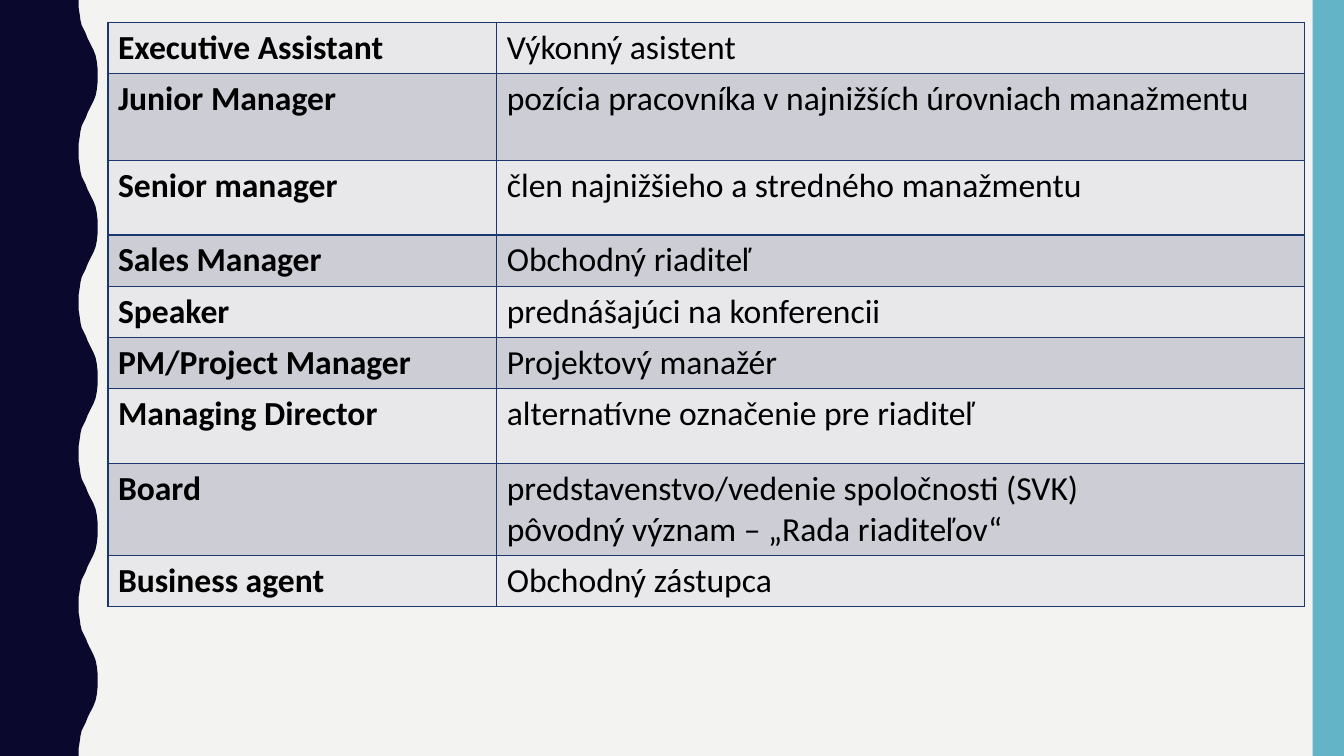
from dataclasses import dataclass

from lxml.etree import SubElement
from pptx import Presentation
from pptx.dml.color import RGBColor
from pptx.enum.shapes import MSO_SHAPE
from pptx.oxml.ns import qn
from pptx.util import Cm, Pt


@dataclass(frozen=True)
class Theme:
    background: str = "F3F3F2"
    wave: str = "0B082E"
    stripe: str = "62B4C6"
    bands: tuple = ("E8E8EB", "CDCED5")
    border: str = "1B376E"
    text: str = "000000"
    font: str = "Calibri"
    size: int = 24


theme = Theme()


def paint(shape, color):
    """Flat fill without outline or shadow."""
    shape.fill.solid()
    shape.fill.fore_color.rgb = RGBColor.from_string(color)
    shape.line.fill.background()
    shape.shadow.inherit = False


def add_borders(cell, color, width):
    """Draw all four sides; borders must precede the fill in the XML."""
    properties = cell._tc.get_or_add_tcPr()
    for position, side in enumerate(("lnL", "lnR", "lnT", "lnB")):
        line = SubElement(properties, qn(f"a:{side}"), w=str(width))
        fill = SubElement(line, qn("a:solidFill"))
        SubElement(fill, qn("a:srgbClr"), val=color)
        properties.insert(position, line)


# Slide and background
presentation = Presentation()
presentation.slide_width = Cm(33.87)
presentation.slide_height = Cm(19.05)
slide = presentation.slides.add_slide(presentation.slide_layouts[6])
slide.background.fill.solid()
slide.background.fill.fore_color.rgb = RGBColor.from_string(theme.background)

# Wavy left edge: one half wave, mirrored and repeated down the slide
half_wave = [
    (1.98, 0), (1.98, 0.18), (2.01, 0.36), (2.03, 0.51), (2.06, 0.64),
    (2.11, 0.74), (2.16, 0.84), (2.21, 0.97), (2.26, 1.07), (2.31, 1.17),
    (2.36, 1.27), (2.41, 1.4), (2.44, 1.55), (2.46, 1.73), (2.46, 1.9),
]
wave_count = 5
wave_length = 19.05 / wave_count
full_wave = half_wave + [(x, wave_length - y) for x, y in reversed(half_wave)]
edge = [
    (Cm(x), Cm(y + number * wave_length))
    for number in range(wave_count)
    for x, y in full_wave
]
outline = slide.shapes.build_freeform(0, 0)
outline.add_line_segments(edge + [(0, Cm(19.05))], close=True)
paint(outline.convert_to_shape(), theme.wave)

# Right stripe
stripe = slide.shapes.add_shape(
    MSO_SHAPE.RECTANGLE, Cm(33.08), 0, Cm(0.79), Cm(19.05))
paint(stripe, theme.stripe)

# Job titles: English term, Slovak meaning lines, row height in cm
positions = [
    ("Executive Assistant", ["Výkonný asistent"], 1.29),
    ("Junior Manager",
     ["pozícia pracovníka v najnižších úrovniach manažmentu"], 2.19),
    ("Senior manager", ["člen najnižšieho a stredného manažmentu"], 1.88),
    ("Sales Manager", ["Obchodný riaditeľ"], 1.29),
    ("Speaker", ["prednášajúci na konferencii"], 1.29),
    ("PM/Project Manager", ["Projektový manažér"], 1.29),
    ("Managing Director", ["alternatívne označenie pre riaditeľ"], 1.88),
    ("Board", ["predstavenstvo/vedenie spoločnosti (SVK)",
               "pôvodný význam – „Rada riaditeľov“"], 2.32),
    ("Business agent", ["Obchodný zástupca"], 1.29),
]
column_widths = (9.8, 20.35)

glossary = slide.shapes.add_table(
    len(positions), len(column_widths), Cm(2.72), Cm(0.56),
    Cm(sum(column_widths)), Cm(sum(height for *_, height in positions))).table
glossary.first_row = False
glossary.horz_banding = False
for column, width in zip(glossary.columns, column_widths):
    column.width = Cm(width)

for row_number, (term, meaning, height) in enumerate(positions):
    glossary.rows[row_number].height = Cm(height)
    for column_number, lines in enumerate(([term], meaning)):
        cell = glossary.cell(row_number, column_number)
        cell.fill.solid()
        cell.fill.fore_color.rgb = RGBColor.from_string(
            theme.bands[row_number % 2])
        add_borders(cell, theme.border, Pt(1))
        for line_number, line in enumerate(lines):
            frame = cell.text_frame
            paragraph = frame.add_paragraph() if line_number else frame.paragraphs[0]
            run = paragraph.add_run()
            run.text = line
            run.font.name = theme.font
            run.font.size = Pt(theme.size)
            run.font.bold = column_number == 0
            run.font.color.rgb = RGBColor.from_string(theme.text)

presentation.save("out.pptx")
